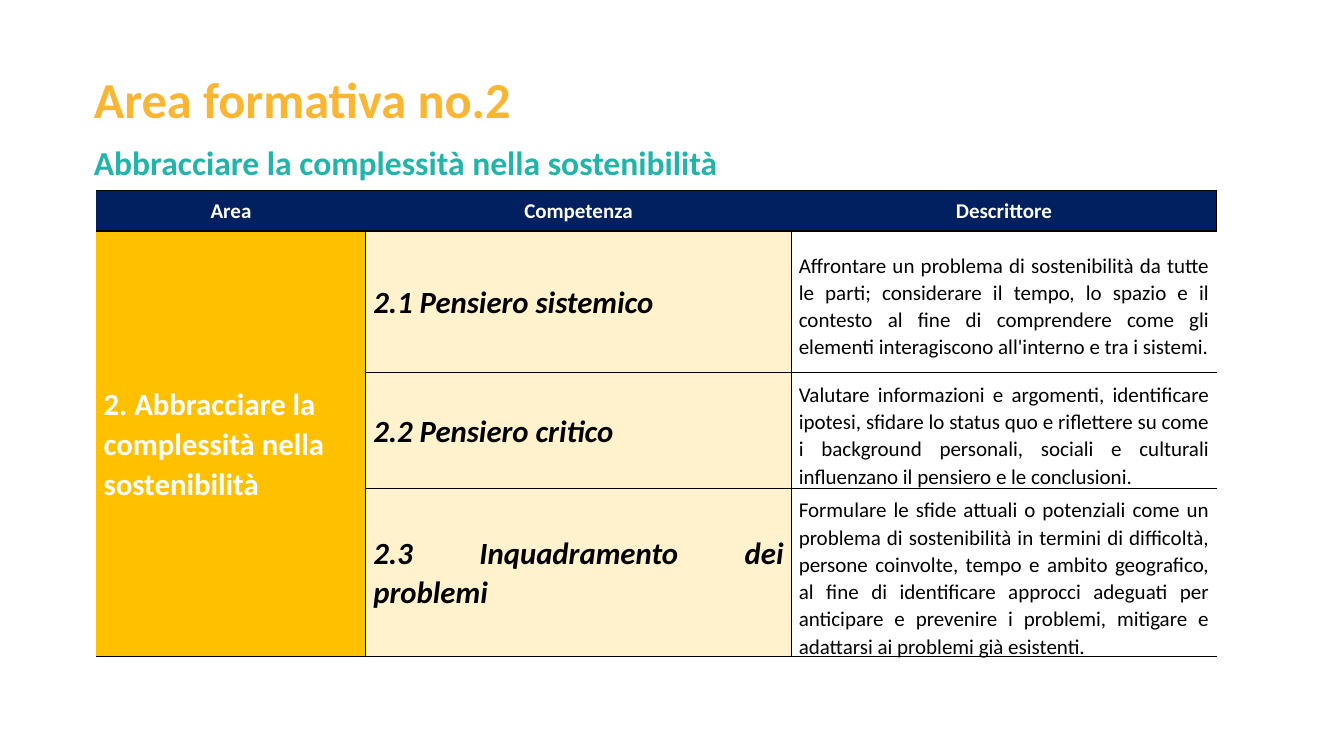
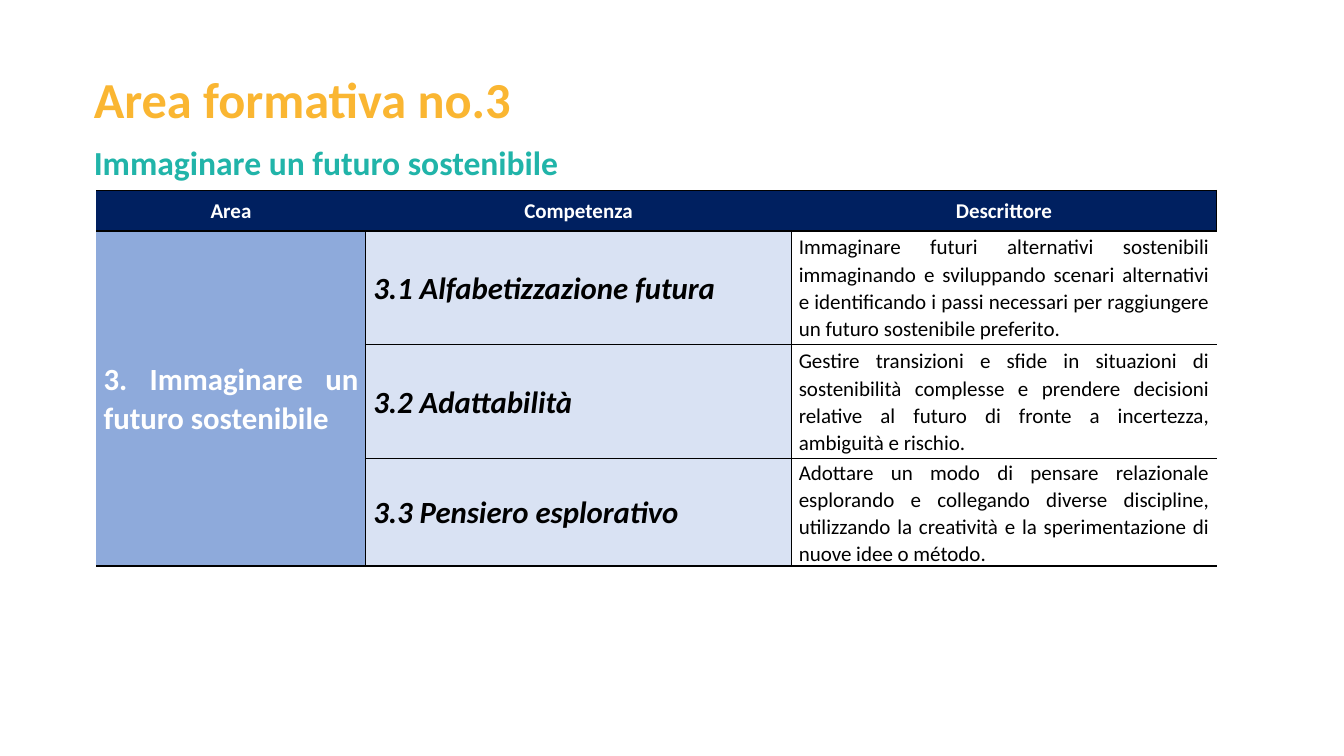
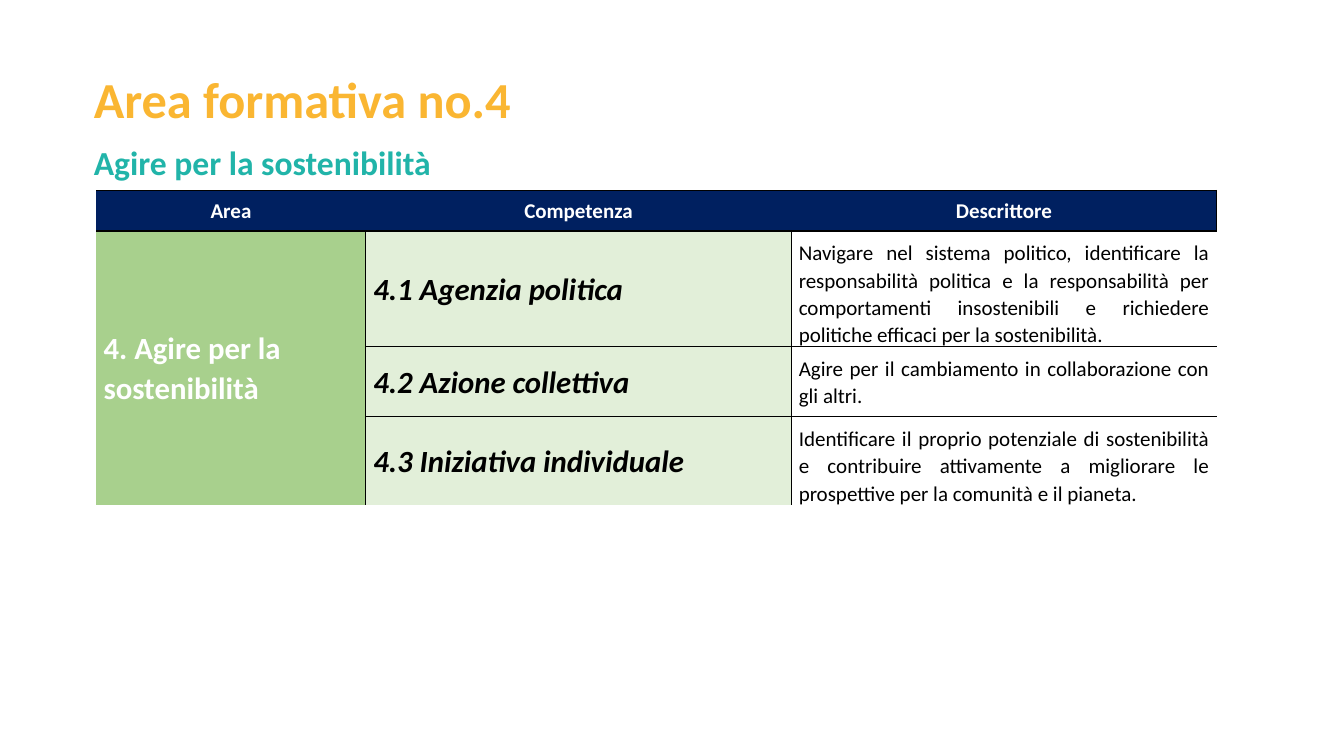
from dataclasses import dataclass

from lxml.etree import SubElement
from pptx import Presentation
from pptx.dml.color import RGBColor
from pptx.enum.text import MSO_ANCHOR, MSO_AUTO_SIZE, PP_ALIGN
from pptx.oxml.ns import qn
from pptx.slide import Slide, SlideLayout
from pptx.table import Table, _Cell
from pptx.text.text import TextFrame
from pptx.util import Cm, Pt


@dataclass(frozen=True)
class Theme:
    font: str = "Calibri"
    title: str = "FAB632"
    subtitle: str = "21B4A9"
    header: str = "002060"
    light: str = "FFFFFF"
    dark: str = "000000"
    title_size: int = 36
    subtitle_size: int = 24
    label_size: int = 22
    text_size: int = 15
    border: int = 1
    table_spacing: float = 1.06


@dataclass(frozen=True)
class Competence:
    name: str
    descriptor: str
    height: float


@dataclass(frozen=True)
class TrainingArea:
    number: int
    name: str
    area_fill: str
    competence_fill: str
    competences: tuple[Competence, ...]
    area_align: PP_ALIGN = PP_ALIGN.LEFT
    descriptor_anchor: MSO_ANCHOR = MSO_ANCHOR.MIDDLE
    descriptor_gap: float = 0.21
    closed_bottom: bool = True


THEME = Theme()
HEADINGS = ("Area", "Competenza", "Descrittore")
COLUMN_WIDTHS = (6.8, 10.72, 10.72)
TABLE_LEFT = 2.42
HEADER_TOP = 4.8
HEADER_HEIGHT = 1.02
SIDE_INSET = 0.19

AREAS = (
    TrainingArea(
        2, "Abbracciare la complessità nella sostenibilità", "FFC000", "FFF2CC",
        (
            Competence(
                "Pensiero sistemico",
                "Affrontare un problema di sostenibilità da tutte le parti; considerare il "
                "tempo, lo spazio e il contesto al fine di comprendere come gli elementi "
                "interagiscono all'interno e tra i sistemi.",
                3.57,
            ),
            Competence(
                "Pensiero critico",
                "Valutare informazioni e argomenti, identificare ipotesi, sfidare lo status "
                "quo e riflettere su come i background personali, sociali e culturali "
                "influenzano il pensiero e le conclusioni.",
                2.91,
            ),
            Competence(
                "Inquadramento dei problemi",
                "Formulare le sfide attuali o potenziali come un problema di sostenibilità in "
                "termini di difficoltà, persone coinvolte, tempo e ambito geografico, al fine "
                "di identificare approcci adeguati per anticipare e prevenire i problemi, "
                "mitigare e adattarsi ai problemi già esistenti.",
                4.25,
            ),
        ),
    ),
    TrainingArea(
        3, "Immaginare un futuro sostenibile", "8EAADB", "D9E2F3",
        (
            Competence(
                "Alfabetizzazione futura",
                "Immaginare futuri alternativi sostenibili immaginando e sviluppando scenari "
                "alternativi e identificando i passi necessari per raggiungere un futuro "
                "sostenibile preferito.",
                2.87,
            ),
            Competence(
                "Adattabilità",
                "Gestire transizioni e sfide in situazioni di sostenibilità complesse e "
                "prendere decisioni relative al futuro di fronte a incertezza, ambiguità e "
                "rischio.",
                2.87,
            ),
            Competence(
                "Pensiero esplorativo",
                "Adottare un modo di pensare relazionale esplorando e collegando diverse "
                "discipline, utilizzando la creatività e la sperimentazione di nuove idee o "
                "método.",
                2.7,
            ),
        ),
        area_align=PP_ALIGN.JUSTIFY,
        descriptor_gap=0,
    ),
    TrainingArea(
        4, "Agire per la sostenibilità", "A8D08D", "E2EFD9",
        (
            Competence(
                "Agenzia politica",
                "Navigare nel sistema politico, identificare la responsabilità politica e la "
                "responsabilità per comportamenti insostenibili e richiedere politiche "
                "efficaci per la sostenibilità.",
                2.9,
            ),
            Competence(
                "Azione collettiva",
                "Agire per il cambiamento in collaborazione con gli altri.",
                1.78,
            ),
            Competence(
                "Iniziativa individuale",
                "Identificare il proprio potenziale di sostenibilità e contribuire "
                "attivamente a migliorare le prospettive per la comunità e il pianeta.",
                2.23,
            ),
        ),
        descriptor_anchor=MSO_ANCHOR.TOP,
        closed_bottom=False,
    ),
)


def write(
    frame: TextFrame,
    text: str,
    *,
    size: int,
    color: str,
    bold: bool = True,
    italic: bool = False,
    align: PP_ALIGN = PP_ALIGN.LEFT,
    spacing: float = 1.0,
) -> None:
    paragraph = frame.paragraphs[0]
    paragraph.alignment = align
    paragraph.line_spacing = spacing
    paragraph.space_before = Pt(0)
    run = paragraph.add_run()
    run.text = text
    run.font.name = THEME.font
    run.font.size = Pt(size)
    run.font.bold = bold
    run.font.italic = italic
    run.font.color.rgb = RGBColor.from_string(color)


def set_borders(cell: _Cell, sides: str) -> None:
    """Draw the sides named by the letters L, R, T, B and clear the others."""
    properties = cell._tc.get_or_add_tcPr()
    for side in "LRTB":
        line = SubElement(properties, qn(f"a:ln{side}"), w=str(Pt(THEME.border)))
        if side in sides:
            fill = SubElement(line, qn("a:solidFill"))
            SubElement(fill, qn("a:srgbClr"), val=THEME.dark)
        else:
            SubElement(line, qn("a:noFill"))


def style_cell(
    cell: _Cell,
    sides: str,
    fill: str | None = None,
    anchor: MSO_ANCHOR = MSO_ANCHOR.MIDDLE,
    top_inset: float = 0,
) -> None:
    set_borders(cell, sides)
    if fill:
        cell.fill.solid()
        cell.fill.fore_color.rgb = RGBColor.from_string(fill)
    else:
        cell.fill.background()
    cell.vertical_anchor = anchor
    cell.margin_left = cell.margin_right = Cm(SIDE_INSET)
    cell.margin_top, cell.margin_bottom = Cm(top_inset), Cm(0)


def add_grid(slide: Slide, top: float, row_heights: list[float]) -> Table:
    table = slide.shapes.add_table(
        len(row_heights), len(COLUMN_WIDTHS), Cm(TABLE_LEFT), Cm(top),
        Cm(sum(COLUMN_WIDTHS)), Cm(sum(row_heights)),
    ).table
    table.first_row = table.horz_banding = False
    for column, width in zip(table.columns, COLUMN_WIDTHS):
        column.width = Cm(width)
    for row, height in zip(table.rows, row_heights):
        row.height = Cm(height)
    return table


def add_header(slide: Slide) -> None:
    table = add_grid(slide, HEADER_TOP, [HEADER_HEIGHT])
    for cell, heading in zip(table.rows[0].cells, HEADINGS):
        style_cell(cell, "RTB" if heading == HEADINGS[-1] else "TB", THEME.header)
        write(cell.text_frame, heading, size=THEME.text_size, color=THEME.light,
              align=PP_ALIGN.CENTER, spacing=THEME.table_spacing)


def add_competences(slide: Slide, area: TrainingArea) -> None:
    heights = [competence.height for competence in area.competences]
    table = add_grid(slide, HEADER_TOP + HEADER_HEIGHT, heights)
    last = len(heights) - 1
    for row, competence in enumerate(area.competences):
        area_cell, name_cell, descriptor_cell = table.rows[row].cells
        bottom = "B" if row < last or area.closed_bottom else ""
        style_cell(area_cell, "RTB" if area.closed_bottom else "RT", area.area_fill)
        style_cell(name_cell, "LRT" + bottom, area.competence_fill)
        style_cell(descriptor_cell, "LT" + bottom, anchor=area.descriptor_anchor,
                   top_inset=area.descriptor_gap)
        write(name_cell.text_frame, f"{area.number}.{row + 1} {competence.name}",
              size=THEME.label_size, color=THEME.dark, italic=True,
              align=PP_ALIGN.JUSTIFY, spacing=THEME.table_spacing)
        write(descriptor_cell.text_frame, competence.descriptor,
              size=THEME.text_size, color=THEME.dark, bold=False,
              align=PP_ALIGN.JUSTIFY, spacing=THEME.table_spacing)
    merged_area = table.cell(0, 0)
    merged_area.merge(table.cell(last, 0))
    write(merged_area.text_frame, f"{area.number}. {area.name}",
          size=THEME.label_size, color=THEME.light,
          align=area.area_align, spacing=THEME.table_spacing)


def add_headings(slide: Slide, area: TrainingArea) -> None:
    title, subtitle = slide.shapes.title, slide.placeholders[1]
    places = ((title, 1.6, 22.81, 1.8), (subtitle, 3.45, 21.36, 1.27))
    for heading, top, width, height in places:
        heading.left, heading.top = Cm(2.11), Cm(top)
        heading.width, heading.height = Cm(width), Cm(height)
        heading.text_frame.vertical_anchor = MSO_ANCHOR.TOP
        heading.text_frame.auto_size = MSO_AUTO_SIZE.SHAPE_TO_FIT_TEXT
    write(title.text_frame, f"Area formativa no.{area.number}",
          size=THEME.title_size, color=THEME.title)
    write(subtitle.text_frame, area.name,
          size=THEME.subtitle_size, color=THEME.subtitle)
    properties = subtitle.text_frame.paragraphs[0]._p.get_or_add_pPr()
    properties.set("marL", "0")
    properties.set("indent", "0")
    SubElement(properties, qn("a:buNone"))


def add_area_slide(deck: Presentation, layout: SlideLayout, area: TrainingArea) -> None:
    slide = deck.slides.add_slide(layout)
    add_headings(slide, area)
    add_header(slide)
    add_competences(slide, area)


def main() -> None:
    deck = Presentation()
    deck.slide_width, deck.slide_height = Cm(33.87), Cm(19.05)
    title_and_content = deck.slide_layouts[1]
    for area in AREAS:
        add_area_slide(deck, title_and_content, area)
    deck.save("out.pptx")


if __name__ == "__main__":
    main()
